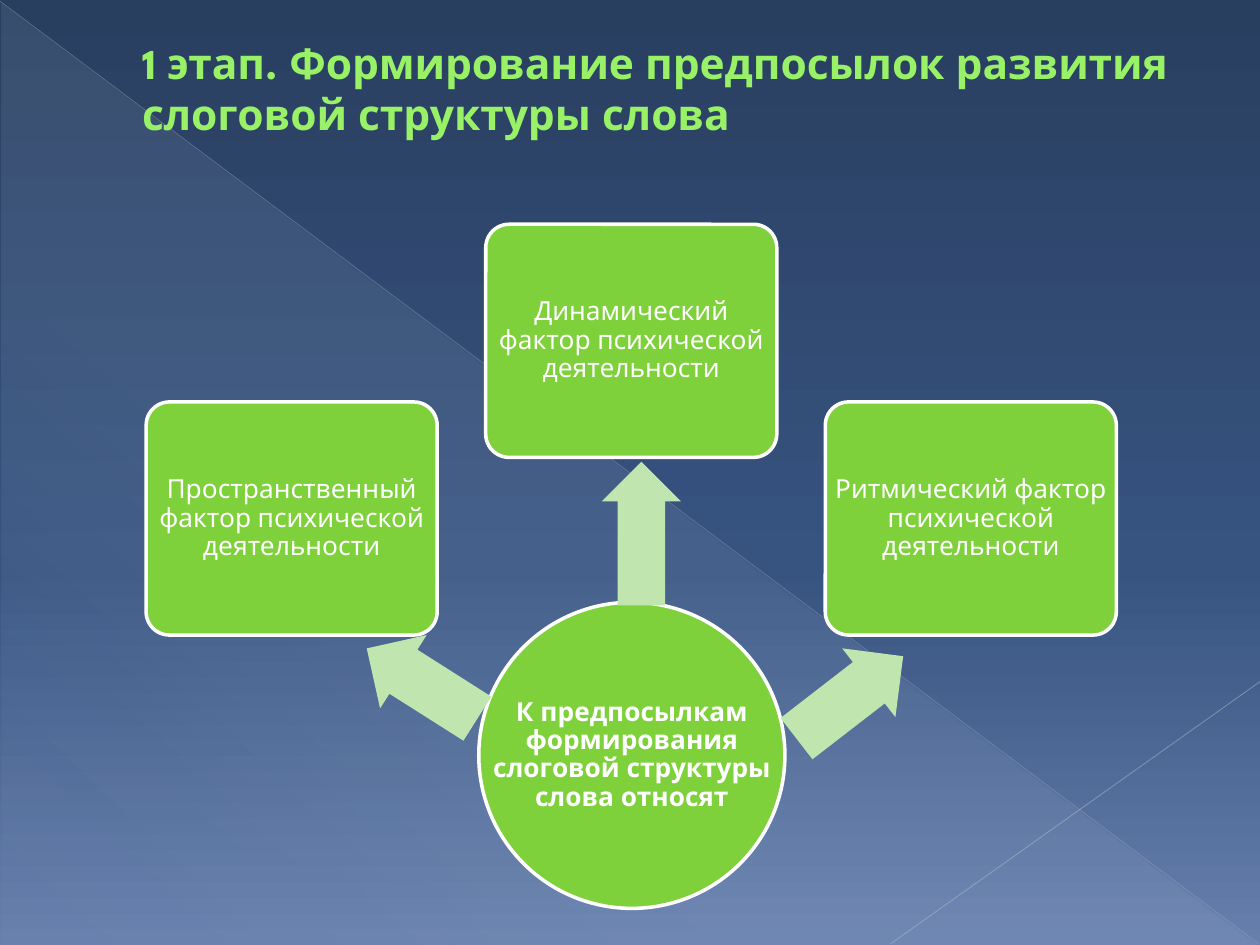
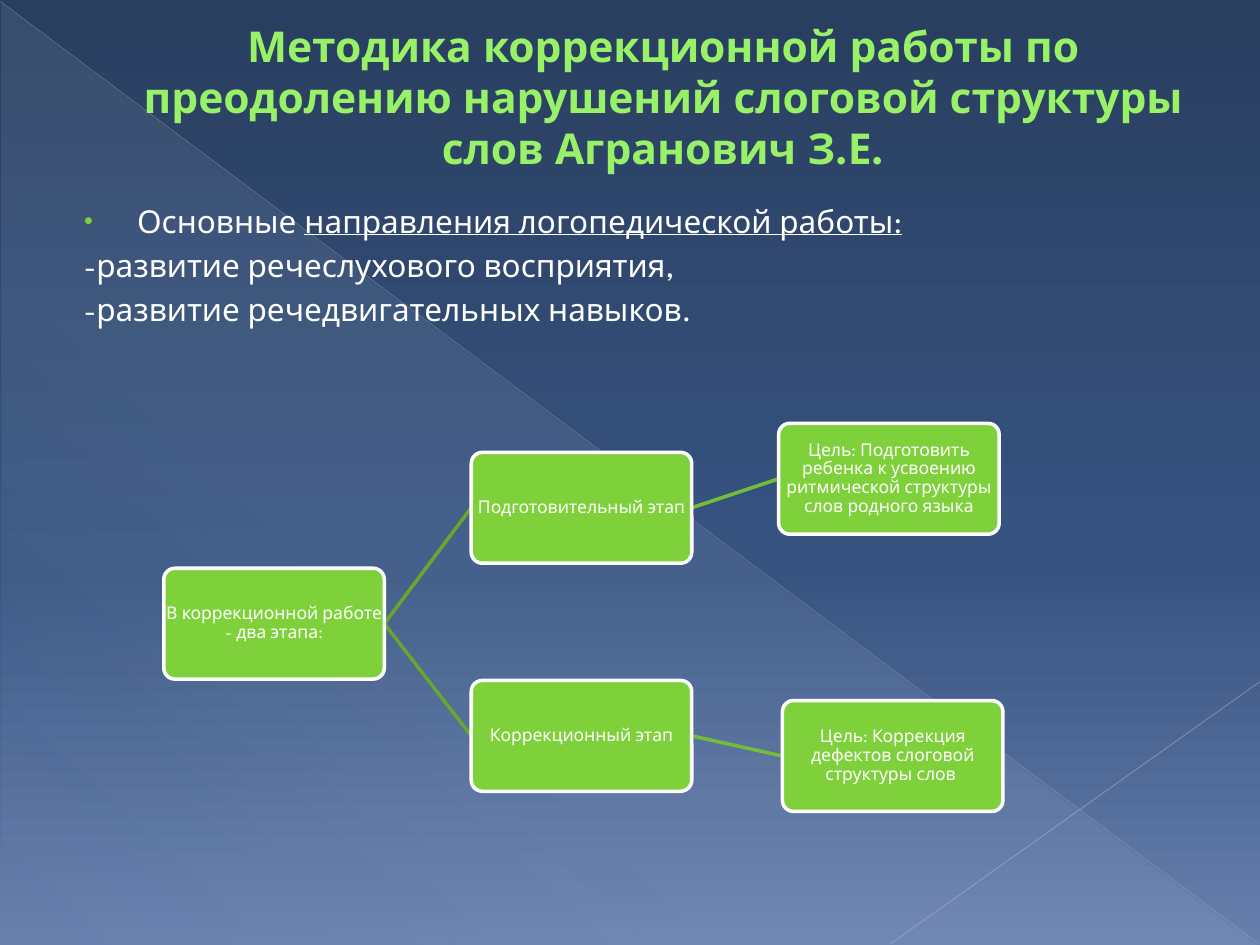
import lxml.etree
import pptx
import pptx.dml.color
import pptx.enum.shapes
import pptx.enum.text
import pptx.oxml.ns
import pptx.util

COLS, ROWS = 100, 75
CELL = pptx.util.Inches(10) / COLS
FONT = "League Spartan"
GREEN, WHITE, PALE_GREEN = "7FD13B", "FFFFFF", "C0E5AF"
TITLE_COLOR, TITLE_OUTLINE = "98F167", "589129"
BRANCH, TWIG = "66A72F", "73BE36"
SKY = [(0, "293F60", 100), (60, "375380", 100), (100, "667FAC", 100)]
GLOW = [(0, "D6ECFF", 10), (70, "D6ECFF", 8), (100, "D6ECFF", 1)]

SHAPE = pptx.enum.shapes.MSO_SHAPE
LEFT, CENTER = pptx.enum.text.PP_ALIGN.LEFT, pptx.enum.text.PP_ALIGN.CENTER
TOP, MIDDLE = pptx.enum.text.MSO_ANCHOR.TOP, pptx.enum.text.MSO_ANCHOR.MIDDLE
qn = pptx.oxml.ns.qn

TITLE = dict(size=24.3, color=TITLE_COLOR, bold=True)


def rgb(value):
    return pptx.dml.color.RGBColor.from_string(value)


def grid(*cells):
    """Turn grid cells into lengths."""
    return [pptx.util.Emu(round(c * CELL)) for c in cells]


def add_xml(parent, tag, **attrs):
    return lxml.etree.SubElement(parent, qn(tag), attrs)


def set_gradient(fill, owner, stops, angle):
    """Fill with (position, colour, opacity) stops, angle clockwise."""
    fill.gradient()
    fill.gradient_angle = 360 - angle
    stop_list = owner.find(".//" + qn("a:gsLst"))
    for old in list(stop_list):
        stop_list.remove(old)
    for position, color, opacity in stops:
        stop = add_xml(stop_list, "a:gs", pos=str(position * 1000))
        clr = add_xml(stop, "a:srgbClr", val=color)
        add_xml(clr, "a:alpha", val=str(opacity * 1000))


def add_line(slide, start, end, color, width, opacity=100):
    c = slide.shapes.add_connector(
        pptx.enum.shapes.MSO_CONNECTOR.STRAIGHT, *grid(*start, *end))
    c.line.color.rgb = rgb(color)
    c.line.width = pptx.util.Pt(width)
    if opacity < 100:
        clr = c._element.find(".//" + qn("a:srgbClr"))
        add_xml(clr, "a:alpha", val=str(opacity * 1000))
    add_xml(c._element.spPr, "a:effectLst")


def add_shape(slide, kind, box, fill=None, outline=None, rotation=0, adjust=()):
    sp = slide.shapes.add_shape(kind, *grid(*box))
    sp.shadow.inherit = False
    sp.rotation = rotation
    for i, value in enumerate(adjust):
        sp.adjustments[i] = value
    if fill:
        sp.fill.solid()
        sp.fill.fore_color.rgb = rgb(fill)
    if outline:
        sp.line.color.rgb = rgb(outline)
        sp.line.width = pptx.util.Pt(2)
    else:
        sp.line.fill.background()
    return sp


def add_frame(slide, box, anchor, inset=None):
    tf = slide.shapes.add_textbox(*grid(*box)).text_frame
    tf.word_wrap = True
    tf.vertical_anchor = anchor
    if inset is not None:
        for side in ("left", "right", "top", "bottom"):
            setattr(tf, "margin_" + side, grid(inset)[0])
    return tf


def add_run(p, text, size, color=WHITE, **formats):
    r = p.add_run()
    r.text = text
    r.font.color.rgb = rgb(color)
    formats.update(name=FONT, size=pptx.util.Pt(size))
    for key, value in formats.items():
        setattr(r.font, key, value)
    return r


def set_indent(p, margin, first):
    for key, value in zip(("marL", "indent"), grid(margin, first)):
        p._p.get_or_add_pPr().set(key, str(value))


def add_title(slide, text, top, height, align):
    p = add_frame(slide, (5, top, 90, height), MIDDLE).paragraphs[0]
    p.alignment = align
    set_indent(p, 5.3, 0)
    rPr = add_run(p, text, **TITLE)._r.get_or_add_rPr()
    ln = add_xml(rPr, "a:ln", w=str(pptx.util.Pt(0.5)))
    add_xml(add_xml(ln, "a:solidFill"), "a:srgbClr", val=TITLE_OUTLINE)
    rPr.insert(0, ln)


def add_node(slide, box, text, size, inset, kind=SHAPE.ROUNDED_RECTANGLE, **formats):
    """A green shape whose label may use its whole bounding box."""
    adjust = (0.1,) if kind == SHAPE.ROUNDED_RECTANGLE else ()
    add_shape(slide, kind, box, GREEN, WHITE, adjust=adjust)
    p = add_frame(slide, box, MIDDLE, inset).paragraphs[0]
    p.alignment = CENTER
    p.line_spacing = 0.9
    add_run(p, text, size, **formats)


def add_slide(prs):
    """A blank slide with the shared backdrop."""
    slide = prs.slides.add_slide(prs.slide_layouts[6])
    set_gradient(slide.background.fill, slide._element, SKY, 90)
    sp = add_shape(slide, SHAPE.RIGHT_TRIANGLE, (0.1, 0.2, 99.8, 74.8))
    set_gradient(sp.fill, sp._element, GLOW, 133)
    add_line(slide, (0, 0.1), (99.9, 74.9), "B7BCC5", 0.39, 35)
    add_line(slide, (COLS, 54.1), (70.7, 74.9), "BFC3CB", 0.47, 45)
    return slide


def build_factors(prs):
    slide = add_slide(prs)
    add_title(slide, "1 этап. Формирование предпосылок развития слоговой структуры слова",
              3.4, 7.1, LEFT)
    add_node(slide, (38, 47.8, 24.3, 24.3),
             "К предпосылкам формирования слоговой структуры слова относят",
             15, 0.1, SHAPE.OVAL, bold=True)
    factors = [
        ("Пространственный", 31.9, (28.3, 50.8, 10.4, 6.9), 32.4),
        ("Динамический", 17.8, (45.2, 39.2, 11.4, 6.3), 90),
        ("Ритмический", 31.9, (62.1, 51.9, 10.7, 6.9), 142.3),
    ]
    for i, (name, top, arrow, angle) in enumerate(factors):
        add_shape(slide, SHAPE.LEFT_ARROW, arrow, PALE_GREEN,
                  rotation=angle, adjust=(0.6, 0.5))
        add_node(slide, (11.6 + 26.95 * i, top, 23.1, 18.5),
                 name + " фактор психической деятельности", 15, 0.3)


def add_directions(slide):
    tf = add_frame(slide, (5, 15.5, 90, 55.1), TOP)
    lines = [
        [("Основные ", False), ("направления логопедической работы:", True)],
        [("-развитие речеслухового восприятия,", False)],
        [("-развитие речедвигательных навыков.", False)],
    ]
    for i, runs in enumerate(lines):
        p = tf.add_paragraph() if i else tf.paragraphs[0]
        p.space_before = pptx.util.Pt(3.6)
        set_indent(p, 4.9, -4.2)
        for text, underline in runs:
            add_run(p, text, 18, underline=underline)
    pPr = tf.paragraphs[0]._p.pPr
    add_xml(add_xml(pPr, "a:buClr"), "a:srgbClr", val=GREEN)
    add_xml(pPr, "a:buSzPct", val="80000")
    add_xml(pPr, "a:buFont", typeface="Arial")
    add_xml(pPr, "a:buChar", char="•")


def build_stages(prs):
    slide = add_slide(prs)
    add_title(slide, "Методика коррекционной работы по преодолению нарушений "
              "слоговой структуры слов Агранович З.Е.", 0, 15.3, CENTER)
    add_directions(slide)
    width, height = 17.5, 8.8
    root, prepare, correct = (13, 45.1), (37.4, 35.9), (37.4, 54)
    prepare_goal, correct_goal = (61.8, 33.6), (62.1, 55.6)
    for (x1, y1), (x2, y2), color in [
            (root, prepare, BRANCH), (root, correct, BRANCH),
            (prepare, prepare_goal, TWIG), (correct, correct_goal, TWIG)]:
        add_line(slide, (x1 + width, y1 + height / 2), (x2, y2 + height / 2), color, 2)
    for corner, text in [
            (root, "В коррекционной работе - два этапа:"),
            (prepare, "Подготовительный этап"),
            (prepare_goal, "Цель: Подготовить ребенка к усвоению "
                           "ритмической структуры слов родного языка"),
            (correct, "Коррекционный этап"),
            (correct_goal, "Цель: Коррекция дефектов слоговой структуры слов ")]:
        add_node(slide, (*corner, width, height), text, 10, 0.1)


def main():
    prs = pptx.Presentation()
    prs.slide_width, prs.slide_height = grid(COLS, ROWS)
    build_factors(prs)
    build_stages(prs)
    prs.save("out.pptx")


if __name__ == "__main__":
    main()
